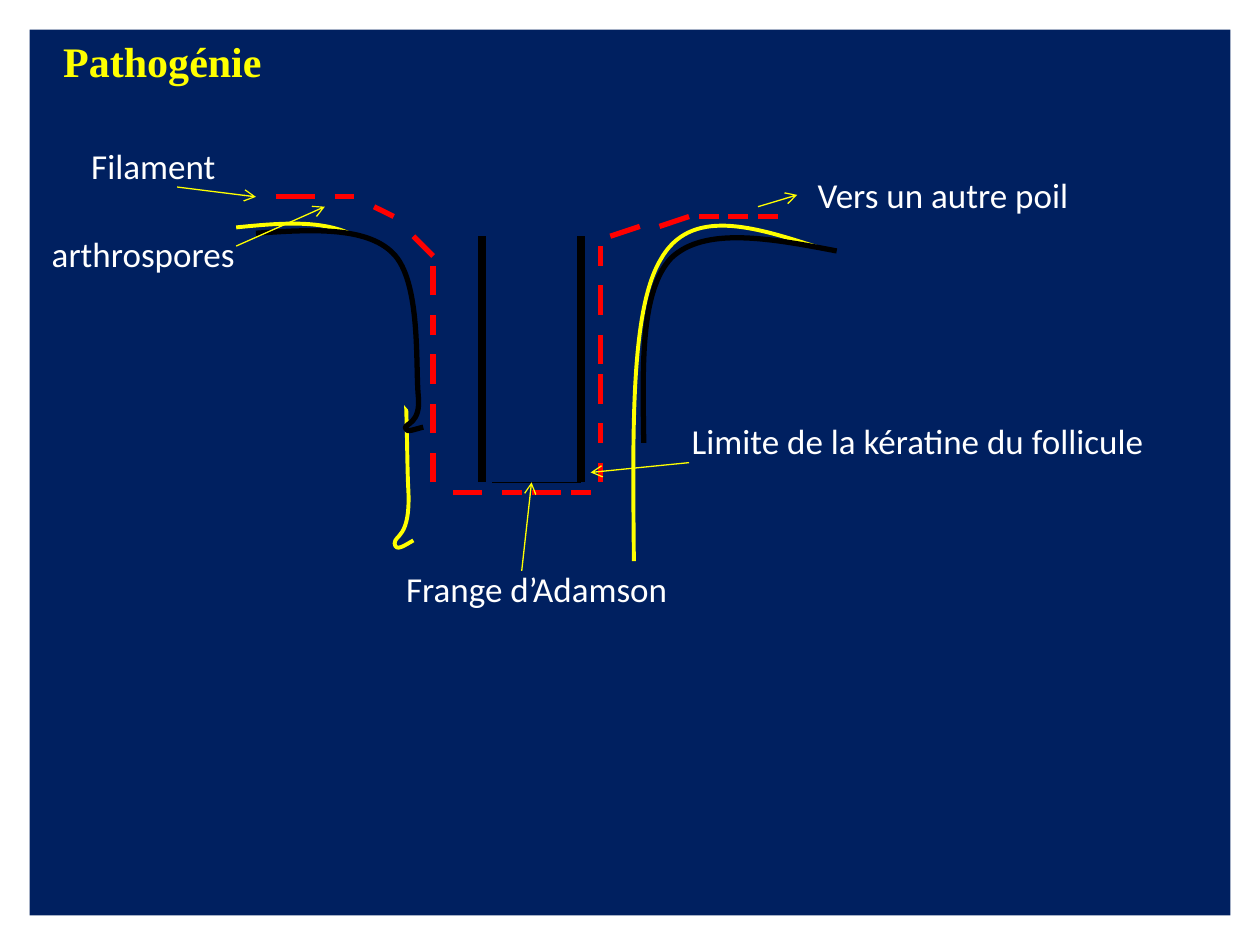
from lxml import etree
from pptx import Presentation
from pptx.dml.color import RGBColor
from pptx.enum.shapes import MSO_CONNECTOR as Link, MSO_SHAPE as Kind
from pptx.enum.text import MSO_ANCHOR as Anchor, MSO_AUTO_SIZE as Fit, PP_ALIGN as Align
from pptx.oxml.ns import qn
from pptx.util import Cm, Pt

NAVY, YELLOW, RED, BLACK, WHITE = "002060", "FFFF00", "FF0000", "000000", "FFFFFF"


def unit(n):
    """The slide is a grid of 128 by 96 units."""
    return Cm(n * 25.4 / 128)


def paint(fmt, color):
    fmt.solid()
    fmt.fore_color.rgb = RGBColor.from_string(color)


def write(shape, text, font="Calibri", size=20, color=WHITE, bold=False,
          left=0.25, before=0, fit=Fit.NONE):
    frame = shape.text_frame
    frame.word_wrap = True
    frame.auto_size = fit
    frame.vertical_anchor = Anchor.TOP
    frame.margin_left = Cm(left)
    para = frame.paragraphs[0]
    para.alignment = Align.LEFT
    para.space_before = Pt(before)
    run = para.add_run()
    run.text = text
    run.font.name, run.font.size, run.font.bold = font, Pt(size), bold
    run.font.color.rgb = RGBColor.from_string(color)


def add_panel(shapes):
    box = shapes.add_shape(Kind.RECTANGLE, *map(unit, (3, 3, 122, 90)))
    box.shadow.inherit = False
    paint(box.fill, NAVY)
    box.line.fill.background()
    write(box, "Pathogénie", font="Times New Roman", size=24, color=YELLOW,
          bold=True, left=0.68, before=4)


def add_label(shapes, text, x, y, wide, left=0.25):
    box = shapes.add_textbox(*map(unit, (x, y, wide, 5.6)))
    write(box, text, left=left, fit=Fit.SHAPE_TO_FIT_TEXT)


def add_line(shapes, ends, color, width, arrow=False):
    line = shapes.add_connector(Link.STRAIGHT, *map(unit, ends))
    paint(line.line.fill, color)
    line.line.width = Pt(width)
    props = line._element.spPr
    if arrow:
        etree.SubElement(props.find(qn("a:ln")), qn("a:tailEnd"), type="arrow")
    etree.SubElement(props, qn("a:effectLst"))


def bend(curve):
    """Turn each three line steps of the outline into one cubic curve."""
    steps = list(curve._element.iter(qn("a:lnTo")))
    for i in range(0, len(steps), 3):
        cubic = etree.Element(qn("a:cubicBezTo"))
        steps[i].addprevious(cubic)
        for step in steps[i:i + 3]:
            cubic.append(step[0])
            step.getparent().remove(step)


def add_curve(shapes, knots, color, width, fill=None):
    start, *rest = [(unit(x), unit(y)) for x, y in knots]
    outline = shapes.build_freeform(*start)
    outline.add_line_segments(rest, close=False)
    curve = outline.convert_to_shape()
    bend(curve)
    curve.shadow.inherit = False
    if fill:
        paint(curve.fill, fill)
    else:
        curve.fill.background()
    paint(curve.line.fill, color)
    curve.line.width = Pt(width)


# Skin curves on both sides of the hair: knots, colour, width, fill
CURVES = [
    ([(24, 23.1), (30, 22.5), (35.8, 22), (38.8, 26.5), (41.7, 31), (41.2, 45.1),
      (41.5, 49.9), (41.7, 54.7), (40.1, 54.3), (40.1, 55.2), (40.2, 56.1),
      (41.1, 55.4), (42, 54.9)], YELLOW, 2.25, None),
    ([(83, 25.1), (76.5, 23), (70.1, 21), (67.1, 26.4), (64, 31.6), (64.3, 44.3),
      (64.4, 57)], YELLOW, 2.25, None),
    ([(26, 23.7), (31.6, 23.3), (37.2, 23), (39.9, 25.7), (42.8, 28.5), (42.2, 37.2),
      (42.5, 40.2), (42.8, 43.1), (41.1, 43), (41.2, 43.5), (41.3, 44),
      (42.1, 43.6), (43, 43.4)], BLACK, 3, NAVY),
    ([(85, 25.5), (78.2, 24.2), (71.6, 23), (68.2, 26.2), (65, 29.6), (65.3, 37.2),
      (65.4, 45)], BLACK, 3, None),
]

# Hair shaft: ends, width
HAIR = [((49, 24, 49, 49), 4.5), ((59, 24, 59, 49), 4.5), ((50, 49, 59, 49), 0.75)]

# Filament dashes: rows by y, columns by x, and slanted ones
ROWS = {20: [(28, 32), (34, 36)],
        50: [(46, 49), (51, 53), (54, 57), (58, 60)],
        22: [(71, 73), (74, 76), (77, 79)]}
COLS = {44: [(27, 30), (32, 34), (36, 39), (41, 44), (46, 49)],
        61: [(25, 27), (29, 32), (34, 37), (38, 41), (43, 45), (47, 49)]}
SLANTS = [(38, 21, 40, 22), (42, 24, 44, 26), (62, 24, 65, 23), (67, 23, 70, 22)]

# Labels: arrow ends, then text, left, top, width and inset
LABELS = [
    ((18, 19, 26, 20), "Filament", 8, 14, 26),
    ((24, 25, 33, 21), "arthrospores", 4, 23, 31),
    ((77, 21, 81, 19.8), "Vers un autre poil", 81, 17, 38, 0.41),
    ((70, 47, 60, 48), "Limite de la kératine du follicule", 69, 42, 49),
    ((53, 58, 54, 49), "Frange d’Adamson", 40, 57, 41),
]


def main():
    deck = Presentation()
    deck.slide_width, deck.slide_height = unit(128), unit(96)
    shapes = deck.slides.add_slide(deck.slide_layouts[6]).shapes

    add_panel(shapes)
    for curve in CURVES:
        add_curve(shapes, *curve)
    for ends, width in HAIR:
        add_line(shapes, ends, BLACK, width)

    # Red filament
    dashes = [(a, y, b, y) for y, spans in ROWS.items() for a, b in spans]
    dashes += [(x, a, x, b) for x, spans in COLS.items() for a, b in spans]
    for ends in dashes + SLANTS:
        add_line(shapes, ends, RED, 3)

    # Labels with their arrows
    for ends, *label in LABELS:
        add_label(shapes, *label)
        add_line(shapes, ends, YELLOW, 0.75, arrow=True)

    deck.save("out.pptx")


if __name__ == "__main__":
    main()
